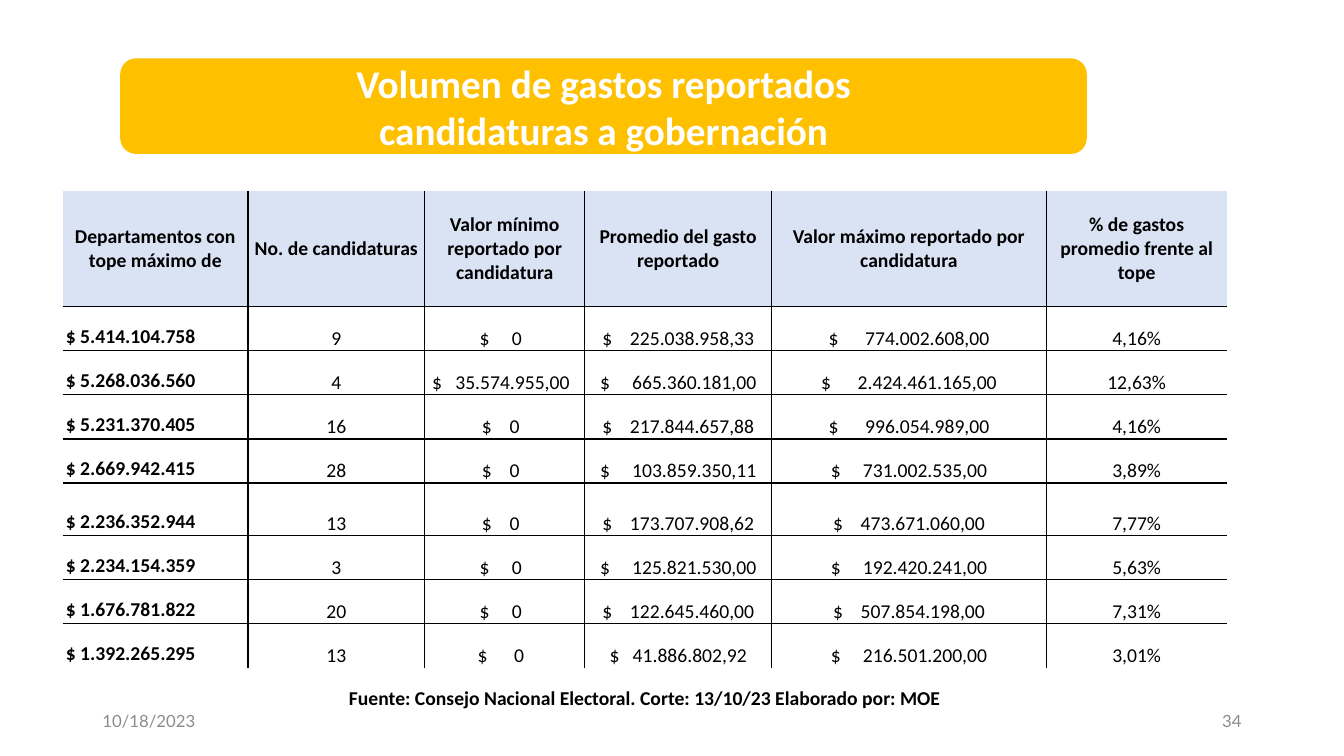
import pptx
import pptx.util
import pptx.dml.color
import pptx.enum.shapes
import pptx.enum.text
import pptx.oxml
import pptx.oxml.ns

TITLE = "Volumen de gastos reportados\ncandidaturas a gobernación"
SOURCE = "Fuente: Consejo Nacional Electoral. Corte: 13/10/23 Elaborado por: MOE"
DATE, NUMBER = "10/18/2023", "34"
HEADERS = [
    "Departamentos con tope máximo de", "No. de candidaturas",
    "Valor mínimo reportado por candidatura", "Promedio del gasto reportado",
    "Valor máximo reportado por candidatura", "% de gastos promedio frente al tope",
]
ROWS = [
    ("$ 5.414.104.758", "9", "0", "225.038.958,33", "774.002.608,00", "4,16%"),
    ("$ 5.268.036.560", "4", "35.574.955,00", "665.360.181,00", "2.424.461.165,00", "12,63%"),
    ("$ 5.231.370.405", "16", "0", "217.844.657,88", "996.054.989,00", "4,16%"),
    ("$ 2.669.942.415", "28", "0", "103.859.350,11", "731.002.535,00", "3,89%"),
    ("$ 2.236.352.944", "13", "0", "173.707.908,62", "473.671.060,00", "7,77%"),
    ("$ 2.234.154.359", "3", "0", "125.821.530,00", "192.420.241,00", "5,63%"),
    ("$ 1.676.781.822", "20", "0", "122.645.460,00", "507.854.198,00", "7,31%"),
    ("$ 1.392.265.295", "13", "0", "41.886.802,92", "216.501.200,00", "3,01%"),
]
GAPS = [(5, 4, 6), (3, 5, 6), (4, 4, 6), (4, 5, 5), (4, 4, 4), (5, 5, 5), (5, 4, 4), (6, 3, 5)]
COL_WIDTHS = [4.67, 4.45, 4.04, 4.7, 6.93, 4.55]
ROW_HEIGHTS = [2.92, 1.11, 1.11, 1.11, 1.11, 1.32, 1.11, 1.11, 1.11]
FIRST_MONEY, LAST_MONEY = 2, 4
MONEY_SHIFT = {2: -0.1}
SIZE = 14
EM = SIZE * 2.54 / 72
DIGIT, MARK, SPACE = 0.507 * EM, 0.25 * EM, 0.226 * EM

Cm = pptx.util.Cm
ALIGN = pptx.enum.text.PP_ALIGN
ANCHOR = pptx.enum.text.MSO_ANCHOR


def rgb(value):
    return pptx.dml.color.RGBColor.from_string(value)


def write(tf, text, size, color, align, bold=False, font="Calibri"):
    tf.text = text
    tf.word_wrap = True
    for p in tf.paragraphs:
        p.alignment = align
        for r in p.runs:
            r.font.name = font
            r.font.size = pptx.util.Pt(size)
            r.font.bold = bold
            r.font.color.rgb = rgb(color)


def add_text(s, box, text, size, color, align, anchor, **style):
    tf = s.shapes.add_textbox(*map(Cm, box)).text_frame
    tf.vertical_anchor = anchor
    write(tf, text, size, color, align, **style)


def set_borders(cell, sides):
    ns = pptx.oxml.ns.nsdecls("a")
    for side in "LRTB":
        line = ('<a:solidFill><a:srgbClr val="000000"/></a:solidFill>'
                if side in sides else "<a:noFill/>")
        cell._tc.get_or_add_tcPr().append(pptx.oxml.parse_xml(
            f'<a:ln{side} {ns} w="12700">{line}</a:ln{side}>'))


def set_margins(cell, left, top, right, bottom):
    cell.margin_left, cell.margin_top = Cm(left), Cm(top)
    cell.margin_right, cell.margin_bottom = Cm(right), Cm(bottom)


def write_money(cell, col, amount, gap):
    tab = DIGIT + gap * SPACE
    width = tab + sum(DIGIT if c.isdigit() else MARK for c in amount)
    left = (COL_WIDTHS[col] - width) / 2 + MONEY_SHIFT.get(col, 0)
    write(cell.text_frame, "$\t" + amount, SIZE, "000000", ALIGN.LEFT)
    cell.margin_left = Cm(left)
    cell.text_frame.paragraphs[0]._p.get_or_add_pPr().append(pptx.oxml.parse_xml(
        f'<a:tabLst {pptx.oxml.ns.nsdecls("a")}><a:tab pos="{int(Cm(tab))}" algn="l"/></a:tabLst>'))


def add_table(s):
    rows = [HEADERS] + ROWS
    table = s.shapes.add_table(len(rows), len(HEADERS), Cm(1.58), Cm(4.81),
                               Cm(sum(COL_WIDTHS)), Cm(sum(ROW_HEIGHTS))).table
    table.first_row = table.horz_banding = False
    for column, width in zip(table.columns, COL_WIDTHS):
        column.width = Cm(width)
    for row, height in zip(table.rows, ROW_HEIGHTS):
        row.height = Cm(height)
    for i, values in enumerate(rows):
        for j, value in enumerate(values):
            cell = table.cell(i, j)
            set_borders(cell, ("L" if j else "") + ("R" if j < len(HEADERS) - 1 else "")
                        + ("T" if i else "") + ("B" if i < len(rows) - 1 else ""))
            label = i == 0 or j == 0
            set_margins(cell, *((0.08, 0.05, 0.08, 0.05) if label else (0.02, 0.02, 0.02, 0)))
            cell.vertical_anchor = ANCHOR.BOTTOM if i else ANCHOR.MIDDLE
            if i:
                cell.fill.background()
            else:
                cell.fill.solid()
                cell.fill.fore_color.rgb = rgb("DAE3F3")
            if i and FIRST_MONEY <= j <= LAST_MONEY:
                write_money(cell, j, value, GAPS[i - 1][j - FIRST_MONEY])
            else:
                align = ALIGN.LEFT if i and j == 0 else ALIGN.CENTER
                write(cell.text_frame, value, SIZE, "000000", align, bold=label)


def add_title(s):
    sp = s.shapes.add_shape(pptx.enum.shapes.MSO_SHAPE.ROUNDED_RECTANGLE,
                            Cm(3.03), Cm(1.47), Cm(24.36), Cm(2.41))
    sp.shadow.inherit = False
    sp.fill.solid()
    sp.fill.fore_color.rgb = rgb("FFC000")
    sp.line.fill.background()
    sp.text_frame.vertical_anchor = ANCHOR.MIDDLE
    write(sp.text_frame, TITLE, 28, "FFFFFF", ALIGN.CENTER, bold=True)


def main():
    prs = pptx.Presentation()
    prs.slide_width, prs.slide_height = Cm(33.87), Cm(19.05)
    s = prs.slides.add_slide(prs.slide_layouts[6])
    for left, text, align in ((2.33, DATE, ALIGN.LEFT), (23.92, NUMBER, ALIGN.RIGHT)):
        add_text(s, (left, 17.66, 7.62, 1.01), text, 12, "8C8C8C", align,
                 ANCHOR.MIDDLE, font="Lato")
    add_table(s)
    add_text(s, (5.74, 17.17, 21.03, 0.86), SOURCE, SIZE, "000000", ALIGN.CENTER,
             ANCHOR.TOP, bold=True)
    add_title(s)
    prs.save("out.pptx")


if __name__ == "__main__":
    main()
